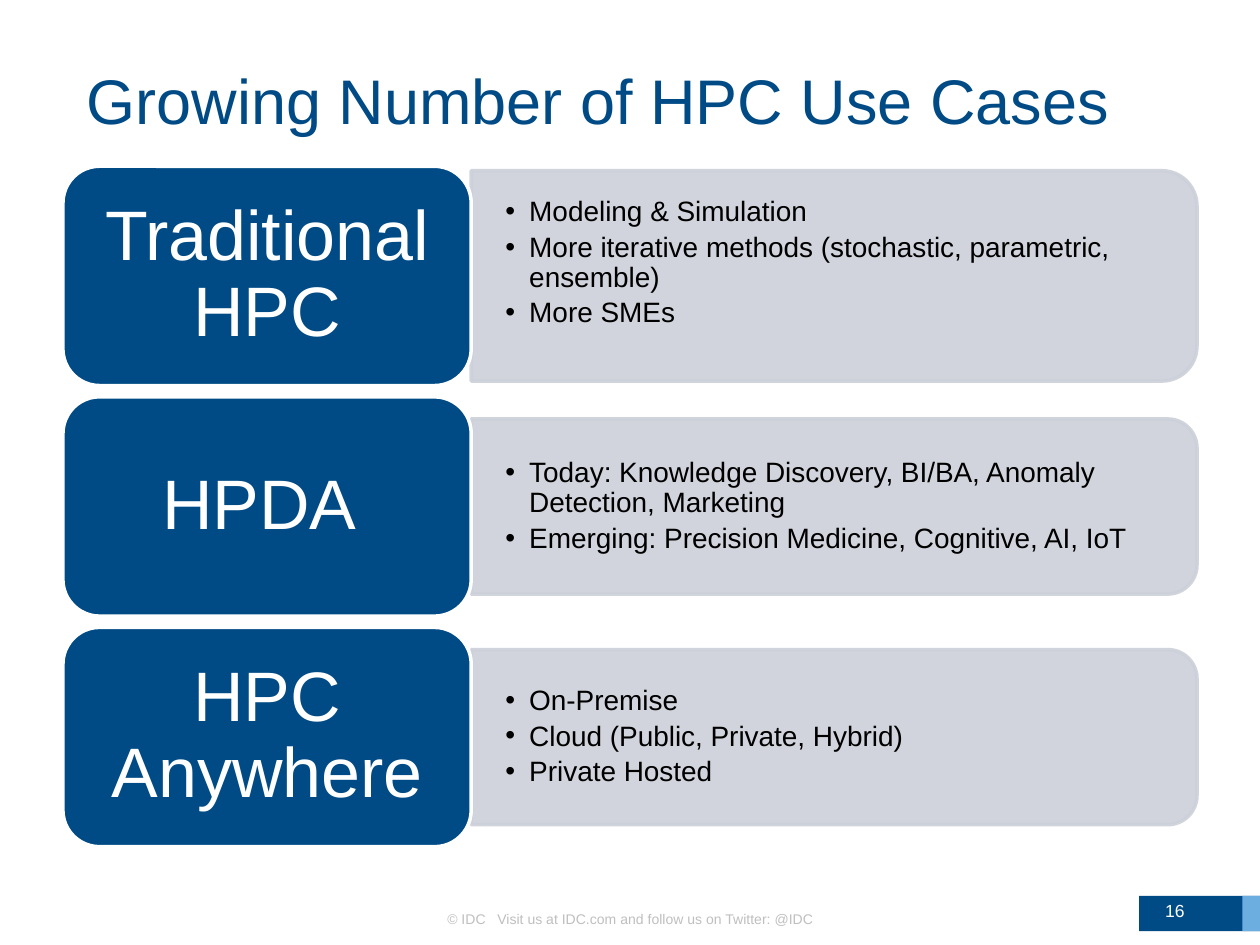
import dataclasses

import pptx
import pptx.dml.color
import pptx.enum.shapes
import pptx.enum.text
import pptx.oxml
import pptx.oxml.ns
import pptx.util

Inches = pptx.util.Inches
Pt = pptx.util.Pt
Color = pptx.dml.color.RGBColor.from_string
Shape = pptx.enum.shapes.MSO_SHAPE
Align = pptx.enum.text.PP_ALIGN
Anchor = pptx.enum.text.MSO_ANCHOR


@dataclasses.dataclass(frozen=True)
class Theme:
    font: str = "Arial"
    navy: str = "004B85"
    sky: str = "6CAEDF"
    panel: str = "CCD0D9"
    white: str = "FFFFFF"
    black: str = "000000"
    muted: str = "BFBFBF"
    title_size: int = 36
    card_size: int = 40
    list_size: int = 16
    footer_size: int = 8
    number_size: int = 10


THEME = Theme()
ROW_PITCH = 1.83
FIRST_CENTER = 2.19
CARD_LEFT, CARD_WIDTH, CARD_HEIGHT = 0.5, 3.24, 1.74
PANEL_LEFT, PANEL_WIDTH = 3.74, 5.76

USE_CASES = [
    ("Traditional HPC", 1.67, 1.51, 0.2, [
        "Modeling & Simulation",
        "More iterative methods (stochastic, parametric, ensemble)",
        "More SMEs",
    ]),
    ("HPDA ", 1.39, 1.26, 0, [
        "Today: Knowledge Discovery, BI/BA, Anomaly Detection, Marketing",
        "Emerging: Precision Medicine, Cognitive, AI, IoT",
    ]),
    ("HPC Anywhere", 1.39, 1.26, 0, [
        "On-Premise",
        "Cloud (Public, Private, Hybrid)",
        "Private Hosted",
    ]),
]


def place(shape, left, top, width, height):
    shape.left, shape.top = Inches(left), Inches(top)
    shape.width, shape.height = Inches(width), Inches(height)


def prepare_frame(shape, horizontal=0.1, top=0.05, bottom=0.05):
    frame = shape.text_frame
    frame.auto_size = pptx.enum.text.MSO_AUTO_SIZE.NONE
    frame.word_wrap = True
    frame.vertical_anchor = Anchor.MIDDLE
    frame.margin_left = frame.margin_right = Inches(horizontal)
    frame.margin_top, frame.margin_bottom = Inches(top), Inches(bottom)
    return frame


def write(paragraph, text, size, color, alignment=Align.LEFT, line_spacing=1.0):
    paragraph.alignment = alignment
    paragraph.line_spacing = line_spacing
    paragraph.space_before = Pt(0)
    run = paragraph.add_run()
    run.text = text
    run.font.name = THEME.font
    run.font.size = Pt(size)
    run.font.bold = False
    run.font.color.rgb = Color(color)


def set_bullet(paragraph, indent):
    properties = paragraph._p.get_or_add_pPr()
    properties.set("marL", str(Inches(indent)))
    properties.set("indent", str(-Inches(indent)))
    namespace = pptx.oxml.ns.nsdecls("a")
    for markup in (f'<a:buFont {namespace} typeface="{THEME.font}"/>',
                   f'<a:buChar {namespace} char="•"/>'):
        properties.append(pptx.oxml.parse_xml(markup))


def set_opacity(shape, percent):
    for color in shape.element.spPr.iter(pptx.oxml.ns.qn("a:srgbClr")):
        alpha = pptx.oxml.parse_xml(
            f'<a:alpha {pptx.oxml.ns.nsdecls("a")} val="{percent * 1000}"/>')
        color.append(alpha)


def add_block(slide, kind, left, top, width, height, fill, line=None):
    shape = slide.shapes.add_shape(
        kind, Inches(left), Inches(top), Inches(width), Inches(height))
    shape.shadow.inherit = False
    shape.fill.solid()
    shape.fill.fore_color.rgb = Color(fill)
    if line:
        shape.line.color.rgb = Color(line)
        shape.line.width = Pt(2)
    else:
        shape.line.fill.background()
    return shape


def add_label(slide, left, top, width, height, text, size, color, alignment):
    box = slide.shapes.add_textbox(
        Inches(left), Inches(top), Inches(width), Inches(height))
    write(prepare_frame(box).paragraphs[0], text, size, color, alignment)


def add_panel(slide, center, height):
    left = PANEL_LEFT + (PANEL_WIDTH - height) / 2
    panel = add_block(slide, Shape.ROUND_2_SAME_RECTANGLE, left,
                      center - PANEL_WIDTH / 2, height, PANEL_WIDTH,
                      THEME.panel, THEME.panel)
    panel.rotation = 90
    set_opacity(panel, 90)


def fill_list(placeholder, center, height, lift, items):
    placeholder.element.getparent().append(placeholder.element)
    place(placeholder, PANEL_LEFT, center - height / 2, 5.69, height)
    frame = prepare_frame(placeholder, 0.27, 0.14, 0.14 + lift)
    for index, item in enumerate(items):
        paragraph = frame.add_paragraph() if index else frame.paragraphs[0]
        set_bullet(paragraph, 0.19)
        write(paragraph, item, THEME.list_size, THEME.black, line_spacing=0.9)
        paragraph.space_after = Pt(3)


def add_card(slide, center, text):
    card = add_block(slide, Shape.ROUNDED_RECTANGLE, CARD_LEFT,
                     center - CARD_HEIGHT / 2, CARD_WIDTH, CARD_HEIGHT,
                     THEME.navy, THEME.white)
    frame = prepare_frame(card, 0.25, 0.16, 0.16)
    write(frame.paragraphs[0], text, THEME.card_size, THEME.white,
          Align.CENTER, 0.9)


def add_footer(slide):
    add_block(slide, Shape.RECTANGLE, 9.04, 7.11, 0.96, 0.28, THEME.navy)
    add_block(slide, Shape.RECTANGLE, 9.86, 7.11, 0.14, 0.28, THEME.sky)
    add_label(slide, 2.58, 7.09, 4.85, 0.4,
              "© IDC   Visit us at IDC.com and follow us on Twitter: @IDC",
              THEME.footer_size, THEME.muted, Align.CENTER)
    add_label(slide, 9, 7.03, 0.5, 0.4, "16",
              THEME.number_size, THEME.white, Align.RIGHT)


def main():
    presentation = pptx.Presentation()
    presentation.slide_width, presentation.slide_height = Inches(10), Inches(7.5)
    slide = presentation.slides.add_slide(
        presentation.slide_layouts.get_by_name("Comparison"))
    title, *bodies = list(slide.placeholders)
    place(title, 0.59, 0.16, 9, 1.25)
    write(prepare_frame(title).paragraphs[0], "Growing Number of HPC Use Cases",
          THEME.title_size, THEME.navy)

    for index, (body, use_case) in enumerate(zip(bodies, USE_CASES)):
        name, panel_height, list_height, lift, items = use_case
        center = FIRST_CENTER + index * ROW_PITCH
        add_panel(slide, center, panel_height)
        fill_list(body, center, list_height, lift, items)
        add_card(slide, center, name)
    for unused in bodies[len(USE_CASES):]:
        unused.element.getparent().remove(unused.element)

    add_footer(slide)
    presentation.save("out.pptx")


if __name__ == "__main__":
    main()
